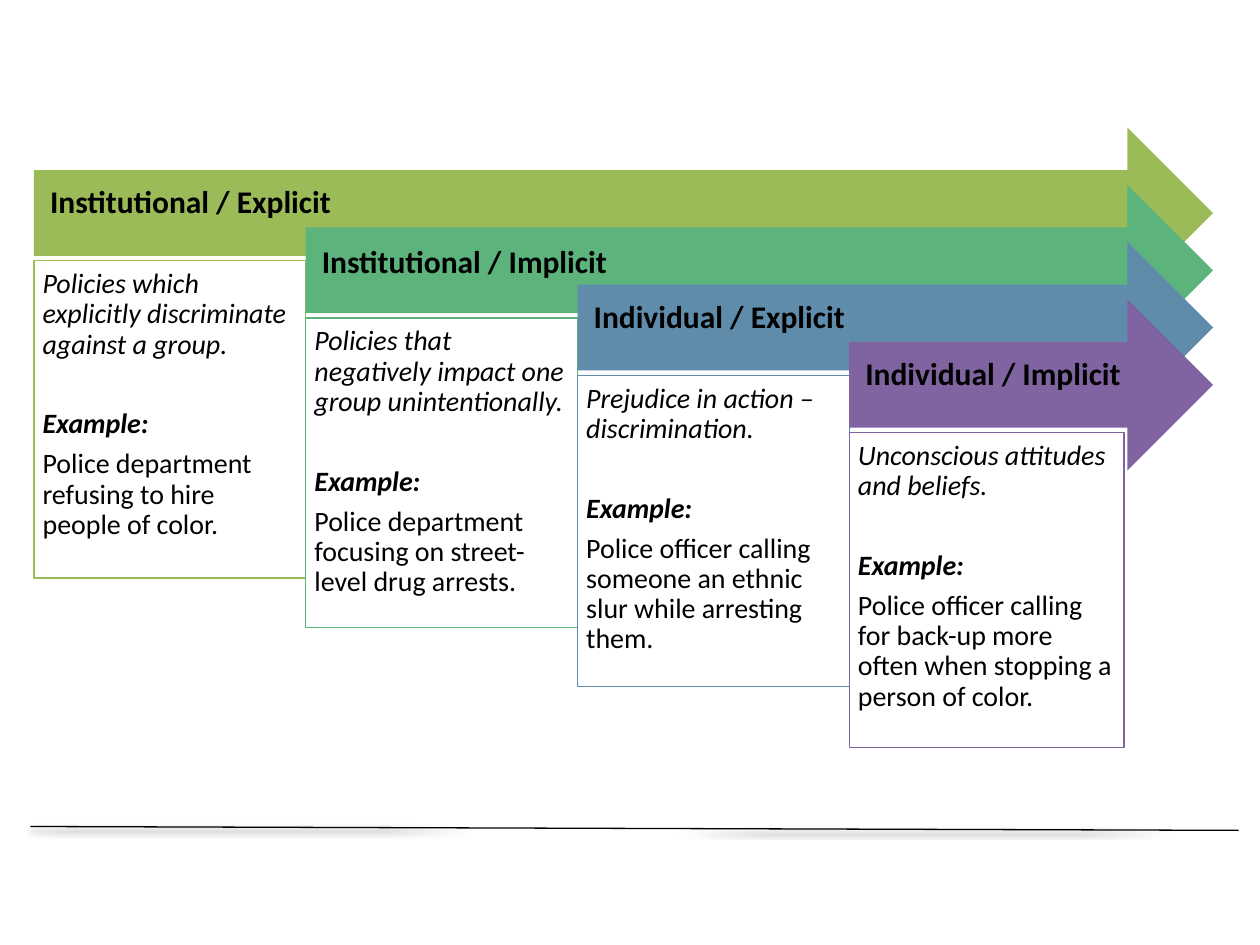
from lxml import etree
from pptx import Presentation
from pptx.dml.color import RGBColor
from pptx.enum.shapes import MSO_CONNECTOR, MSO_SHAPE
from pptx.enum.text import MSO_ANCHOR, PP_ALIGN
from pptx.oxml.ns import qn
from pptx.util import Pt

RECT, ARROW = MSO_SHAPE.RECTANGLE, MSO_SHAPE.RIGHT_ARROW
STRAIGHT = MSO_CONNECTOR.STRAIGHT
TOP, MIDDLE = MSO_ANCHOR.TOP, MSO_ANCHOR.MIDDLE
LEFT = PP_ALIGN.LEFT

COLORS = {"black": "000000", "white": "FFFFFF", "green": "9BBB59",
          "teal": "5CB37C", "blue": "608CAB", "purple": "8064A2"}

# label, color, label line spacing, definition, example, box width, box height
LEVELS = [
    ("Institutional / Explicit", "green", 0.9,
     "Policies which explicitly discriminate against a group.",
     "Police department refusing to hire people of color.", 155.3, 181.4),
    ("Institutional / Implicit", "teal", 1.0,
     "Policies that negatively impact one group unintentionally.",
     "Police department focusing on street-level drug arrests.", 155.3, 177.1),
    ("Individual / Explicit", "blue", 0.9,
     "Prejudice in action – discrimination.",
     "Police officer calling someone an ethnic slur while arresting them.",
     155.3, 177.8),
    ("Individual / Implicit", "purple", 0.9,
     "Unconscious attitudes and beliefs.",
     "Police officer calling for back-up more often when stopping a person of color.",
     157, 180),
]
START_X, RIGHT_X, STEP_X = 19.4, 693.2, 155.3
ARROW_Y, BOX_Y, STEP_Y = 72.8, 149, 32.7
ARROW_H = 98


class Deck:
    font = "Calibri"

    def __init__(self, width, height):
        self.prs = Presentation()
        self.prs.slide_width, self.prs.slide_height = Pt(width), Pt(height)
        self.slide = self.prs.slides.add_slide(self.prs.slide_layouts[6])

    def color(self, name):
        return RGBColor.from_string(COLORS[name])

    def shape(self, kind, x, y, w, h, fill, line=None):
        sp = self.slide.shapes.add_shape(kind, Pt(x), Pt(y), Pt(w), Pt(h))
        sp.shadow.inherit = False
        sp.fill.solid()
        sp.fill.fore_color.rgb = self.color(fill)
        if line:
            sp.line.color.rgb = self.color(line)
            sp.line.width = Pt(0.75)
        else:
            sp.line.fill.background()
        return sp

    def text(self, sp, paragraphs, size, anchor, insets, spacing=0.9):
        """Fill a shape with (text, bold, italic, space after) paragraphs."""
        tf = sp.text_frame
        tf.word_wrap = True
        tf.vertical_anchor = anchor
        (tf.margin_left, tf.margin_top,
         tf.margin_right, tf.margin_bottom) = map(Pt, insets)
        tf.text = "\n".join(item[0] for item in paragraphs)
        for p, (_, bold, italic, after) in zip(tf.paragraphs, paragraphs):
            p.alignment = LEFT
            p.line_spacing = spacing
            p.space_after = Pt(after)
            font = p.runs[0].font
            font.name, font.size = self.font, Pt(size)
            font.bold, font.italic = bold, italic
            font.color.rgb = self.color("black")

    def arrow(self, x, y, w, h, fill, label, spacing):
        sp = self.shape(ARROW, x, y, w, h, fill)
        self.text(sp, [(label, True, False, 0)], 18, MIDDLE,
                  (9.2, 5, 20, 15.8), spacing)

    def box(self, x, y, w, h, line, definition, example):
        sp = self.shape(RECT, x, y, w, h, "white", line)
        self.text(sp, [(definition, False, True, 28.4),
                       ("Example:", True, True, 5.6),
                       (example, False, False, 0)], 16, TOP, (5, 5, 5, 5))

    def shadowed_line(self, x1, y1, x2, y2):
        line = self.slide.shapes.add_connector(
            STRAIGHT, Pt(x1), Pt(y1), Pt(x2), Pt(y2))
        line.line.color.rgb = self.color("black")
        line.line.width = Pt(0.75)
        effects = etree.SubElement(line._element.spPr, qn("a:effectLst"))
        shadow = etree.SubElement(
            effects, qn("a:outerShdw"), blurRad=str(Pt(3.1)),
            dist=str(Pt(1.6)), dir="5400000", rotWithShape="0")
        color = etree.SubElement(shadow, qn("a:srgbClr"), val=COLORS["black"])
        etree.SubElement(color, qn("a:alpha"), val="38000")


def main():
    deck = Deck(720, 540)
    deck.shadowed_line(17.3, 472.3, 707.8, 474.5)
    for i, (label, color, spacing, definition, example, w, h) in enumerate(LEVELS):
        x, drop = START_X + i * STEP_X, i * STEP_Y
        deck.arrow(x, ARROW_Y + drop, RIGHT_X - x, ARROW_H, color, label, spacing)
        deck.box(x, BOX_Y + drop, w, h, color, definition, example)
    deck.prs.save("out.pptx")


if __name__ == "__main__":
    main()
